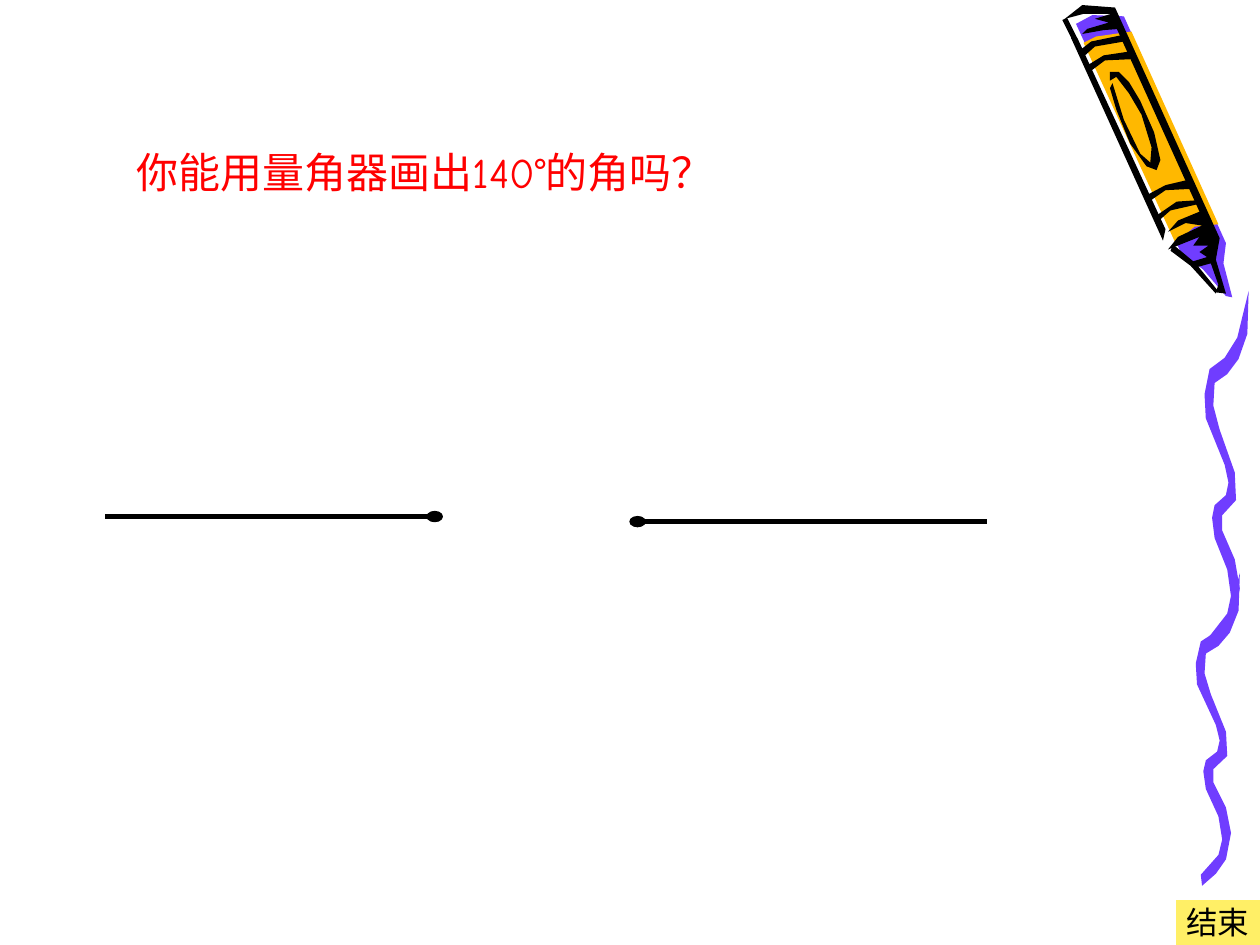
from lxml import etree
from pptx import Presentation
from pptx.dml.color import RGBColor
from pptx.enum.shapes import MSO_CONNECTOR, MSO_SHAPE
from pptx.enum.text import MSO_ANCHOR, MSO_AUTO_SIZE, PP_ALIGN
from pptx.oxml.ns import qn
from pptx.util import Inches, Pt

COLORS = {
    "ink": "000000",
    "violet": "703DFF",
    "orange": "FFB800",
    "question": "FF0000",
    "button": "FFEF66",
}
FONT = "Comic Neue"

BARREL_SHADE = [(0.14, 0.19), (0.97, 2), (1.15, 2.14), (1.33, 2.35), (1.38, 2.36),
                (1.31, 2.09), (1.33, 1.93), (0.52, 0.13), (0.27, 0.12)]
BARREL = [(0.93, 1.93), (1.08, 1.8), (1.27, 1.78), (0.58, 0.25), (0.3, 0.29), (0.2, 0.34)]
INK_MARKS = [
    [(0.89, 1.99), (1.05, 2.11), (1.25, 2.33), (1.26, 2.3), (1.09, 2.09), (0.91, 1.94)],
    [(0.19, 0.27), (0.36, 0.24), (0.49, 0.23), (0.42, 0.11), (0.29, 0.15), (0.4, 0.18),
     (0.23, 0.23)],
    [(0.41, 0.7), (0.46, 0.87), (0.57, 1.14), (0.7, 1.32), (0.78, 1.35), (0.81, 1.27),
     (0.76, 1.05), (0.65, 0.8), (0.56, 0.65), (0.48, 0.57), (0.41, 0.57), (0.41, 0.64),
     (0.46, 0.61), (0.56, 0.74), (0.66, 0.91), (0.74, 1.17), (0.73, 1.29), (0.65, 1.22),
     (0.52, 0.95), (0.43, 0.66)],
    [(0.1, 0.3), (0.83, 1.91), (0.85, 1.82), (0.15, 0.3)],
    [(0.87, 1.98), (0.95, 1.88), (1.14, 1.79), (1.01, 1.77), (0.87, 1.84), (0.95, 1.75),
     (1.12, 1.68), (0.41, 0.11), (0.2, 0.11), (0.05, 0.15), (0.19, 0.04), (0.45, 0.06),
     (1.28, 1.89), (1.25, 2.06), (1.33, 2.33), (1.25, 2.32), (1.27, 2.26), (1.21, 2.09),
     (1.1, 2.12), (1.05, 2.08), (1.18, 2.04), (1.12, 2), (1.19, 1.95), (1.07, 1.95),
     (1.12, 1.88)],
    [(0.81, 1.74), (0.89, 1.67), (1.11, 1.62), (1.09, 1.59), (0.94, 1.6), (0.78, 1.71)],
    [(0.72, 1.6), (0.85, 1.51), (1.05, 1.5), (1.02, 1.43), (0.85, 1.47), (0.7, 1.55)],
    [(0.25, 0.57), (0.37, 0.48), (0.59, 0.47), (0.56, 0.41), (0.36, 0.44), (0.23, 0.52)],
    [(0.2, 0.45), (0.29, 0.37), (0.52, 0.33), (0.5, 0.28), (0.26, 0.33), (0.17, 0.4)],
]
WAVE_HEIGHT = 2.84
WAVE = [(0.04, 2.74), (0.18, 2.56), (0.21, 2.42), (0.18, 2.21), (0.08, 1.96), (0.06, 1.8),
        (0.08, 1.7), (0.17, 1.62), (0.19, 1.52), (0.16, 1.38), (0.01, 1.01), (0, 0.82),
        (0.04, 0.62), (0.16, 0.53), (0.26, 0.37), (0.35, 0), (0.34, 0.34), (0.27, 0.54),
        (0.18, 0.66), (0.08, 0.73), (0.07, 0.91), (0.12, 1.1), (0.24, 1.44), (0.25, 1.66),
        (0.14, 1.78), (0.14, 1.9), (0.24, 2.13), (0.28, 2.36), (0.24, 2.6), (0.16, 2.73),
        (0.05, 2.84)]


def rgb(name):
    return RGBColor.from_string(COLORS[name])


def add_outline(slide, left, top, points, color, stretch=1):
    placed = [(Inches(left + x), Inches(top + y * stretch)) for x, y in points]
    builder = slide.shapes.build_freeform(*placed[0])
    builder.add_line_segments(placed[1:], close=True)
    outline = builder.convert_to_shape()
    outline.shadow.inherit = False
    outline.fill.solid()
    outline.fill.fore_color.rgb = rgb(color)
    outline.line.fill.background()


def add_stroke(slide, start, end, width):
    ends = [Inches(value) for value in (*start, *end)]
    stroke = slide.shapes.add_connector(MSO_CONNECTOR.STRAIGHT, *ends)
    stroke.line.color.rgb = rgb("ink")
    stroke.line.width = Pt(width)
    etree.SubElement(stroke._element.spPr, qn("a:effectLst"))


def format_label(frame, text, size, color, anchor):
    frame.text = text
    frame.word_wrap = False
    frame.vertical_anchor = anchor
    paragraph = frame.paragraphs[0]
    paragraph.alignment = PP_ALIGN.CENTER
    font = paragraph.runs[0].font
    font.name = FONT
    font.size = Pt(size)
    font.color.rgb = rgb(color)


def add_crayon(slide, left, top):
    add_outline(slide, left, top, BARREL_SHADE, "violet")
    add_outline(slide, left, top, BARREL, "orange")
    for mark in INK_MARKS:
        add_outline(slide, left, top, mark, "ink")
    add_stroke(slide, (left + 0.05, top + 0.15), (left + 0.13, top + 0.31), 3)


def add_wave(slide, left, top, height):
    add_outline(slide, left, top, WAVE, "violet", height / WAVE_HEIGHT)


def add_question(slide, left, top, width, height):
    question = slide.shapes.title
    question.left, question.top = Inches(left), Inches(top)
    question.width, question.height = Inches(width), Inches(height)
    format_label(question.text_frame, "你能用量角器画出140°的角吗？", 24, "question",
                 MSO_ANCHOR.TOP)
    question.text_frame.auto_size = MSO_AUTO_SIZE.SHAPE_TO_FIT_TEXT


def add_ray(slide, start, end, dot_left, dot_top):
    add_stroke(slide, start, end, 2.5)
    vertex = slide.shapes.add_shape(MSO_SHAPE.FLOWCHART_CONNECTOR, Inches(dot_left),
                                    Inches(dot_top), Inches(0.12), Inches(0.08))
    vertex.shadow.inherit = False
    vertex.fill.solid()
    vertex.fill.fore_color.rgb = rgb("ink")
    vertex.line.color.rgb = rgb("ink")
    vertex.line.width = Pt(0.75)


def add_end_button(slide, left, top, width, height):
    button = slide.shapes.add_shape(MSO_SHAPE.ACTION_BUTTON_CUSTOM, Inches(left),
                                    Inches(top), Inches(width), Inches(height))
    button.shadow.inherit = False
    button.fill.solid()
    button.fill.fore_color.rgb = rgb("button")
    button.line.fill.background()
    format_label(button.text_frame, "结束", 18, "ink", MSO_ANCHOR.MIDDLE)


def main():
    deck = Presentation()
    deck.slide_width, deck.slide_height = Inches(10), Inches(7.5)
    slide = deck.slides.add_slide(deck.slide_layouts[5])
    add_wave(slide, 9.49, 4.55, 2.48)
    add_wave(slide, 9.56, 2.31, WAVE_HEIGHT)
    add_crayon(slide, 8.4, 0)
    add_question(slide, 0.83, 1.11, 5.09, 0.5)
    add_ray(slide, (5.08, 4.14), (7.83, 4.14), 5, 4.1)
    add_ray(slide, (3.46, 4.1), (0.83, 4.1), 3.39, 4.06)
    add_end_button(slide, 9.33, 7.14, 0.67, 0.36)
    deck.save("out.pptx")


if __name__ == "__main__":
    main()
